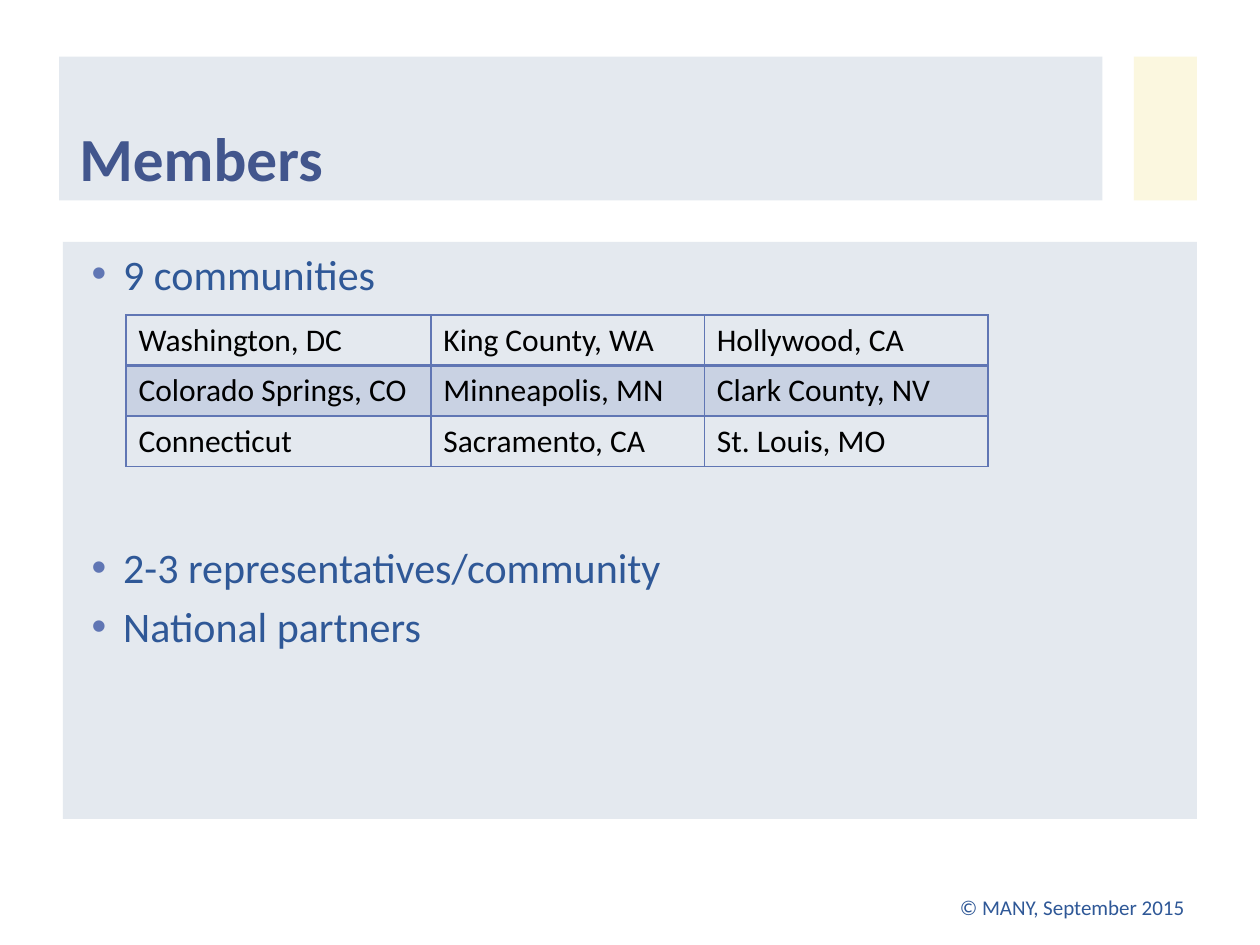
from lxml import etree
from pptx import Presentation
from pptx import util as u
from pptx.dml import color
from pptx.enum import shapes, text
from pptx.oxml import ns

FONT, BLUE, EDGE, PALE = "Calibri", "2F5897", "6076B4", "E4E9EF"


def box(*sides):
    return [u.Inches(side) for side in sides]


def rgb(code):
    return color.RGBColor.from_string(code)


def sub(parent, tag, **attrs):
    return etree.SubElement(parent, ns.qn(tag), attrs)


def paint(fill, code, alpha=100):
    fill.solid()
    fill.fore_color.rgb = rgb(code)
    if alpha < 100:
        tint = fill._xPr.find(ns.qn("a:solidFill"))[0]
        sub(tint, "a:alpha", val=str(alpha * 1000))


def write(para, words, size, code, bold=False):
    run = para.add_run()
    run.text = words
    font = run.font
    font.name, font.size, font.bold = FONT, u.Pt(size), bold
    font.color.rgb = rgb(code)


def header(slide, left, top, width, height):
    title = slide.shapes.title
    title.left, title.top, title.width, title.height = box(left, top, 8.28, height)
    paint(title.fill, PALE)
    frame = title.text_frame
    frame.auto_size = text.MSO_AUTO_SIZE.NONE
    frame.vertical_anchor = text.MSO_ANCHOR.BOTTOM
    para = frame.paragraphs[0]
    para.alignment = text.PP_ALIGN.LEFT
    para._p.get_or_add_pPr().set("marL", str(u.Inches(0.06)))
    write(para, "Members", 35, "42568D", True)

    accent = slide.shapes.add_shape(
        shapes.MSO_SHAPE.RECTANGLE, *box(left + width - 0.5, top, 0.5, height))
    accent.shadow.inherit = False
    accent.line.fill.background()
    paint(accent.fill, "FAF5D2", 70)


def body(slide, left, top, width, height):
    panel = slide.shapes.add_textbox(*box(left, top, width, height))
    paint(panel.fill, PALE)
    frame = panel.text_frame
    frame.word_wrap = True
    points = [("9 communities", 0), ("2-3 representatives/community", 139),
              ("National partners", 4.8)]
    for i, (words, gap) in enumerate(points):
        para = frame.add_paragraph() if i else frame.paragraphs[0]
        para.space_before = u.Pt(gap)
        props = para._p.get_or_add_pPr()
        props.set("marL", str(u.Inches(0.38)))
        props.set("indent", str(u.Inches(-0.25)))
        sub(sub(props, "a:buClr"), "a:srgbClr", val=EDGE)
        sub(props, "a:buFont", typeface="Arial")
        sub(props, "a:buChar", char="•")
        write(para, words, 24, BLUE)

    places(slide, left + 0.5, top + 0.58)


def places(slide, left, top):
    rows = [("Washington, DC", "King County, WA", "Hollywood, CA"),
            ("Colorado Springs, CO", "Minneapolis, MN", "Clark County, NV"),
            ("Connecticut", "Sacramento, CA", "St. Louis, MO")]
    widths = [2.42, 2.17, 2.25]
    high = 0.4
    table = slide.shapes.add_table(
        len(rows), len(widths),
        *box(left, top, sum(widths), high * len(rows))).table
    table.first_row = table.horz_banding = False
    for col, width in zip(table.columns, widths):
        col.width = u.Inches(width)
    for r, row in enumerate(rows):
        table.rows[r].height = u.Inches(high)
        for c, words in enumerate(row):
            cell = table.cell(r, c)
            border(cell, {"L": 1, "R": 1, "T": 2 if r == 1 else 1,
                          "B": 2 if r == 0 else 1})
            if r % 2:
                paint(cell.fill, EDGE, 20)
            else:
                cell.fill.background()
            write(cell.text_frame.paragraphs[0], words, 18, "000000")


def border(cell, sides):
    props = cell._tc.get_or_add_tcPr()
    for side, size in sides.items():
        line = sub(props, "a:ln" + side, w=str(u.Pt(size)))
        sub(sub(line, "a:solidFill"), "a:srgbClr", val=EDGE)


def footer(slide, left, top, width, height):
    frame = slide.shapes.add_textbox(*box(left, top, width, height)).text_frame
    frame.word_wrap = True
    frame.vertical_anchor = text.MSO_ANCHOR.BOTTOM
    para = frame.paragraphs[0]
    para.alignment = text.PP_ALIGN.RIGHT
    write(para, "© MANY, September 2015", 12, BLUE)


def main():
    deck = Presentation()
    deck.slide_width, deck.slide_height = box(10, 7.5)
    slide = deck.slides.add_slide(deck.slide_layouts[5])
    header(slide, 0.47, 0.45, 9.03, 1.14)
    body(slide, 0.5, 1.92, 9, 4.58)
    footer(slide, 5.17, 6.95, 4.33, 0.4)
    deck.save("out.pptx")


if __name__ == "__main__":
    main()
